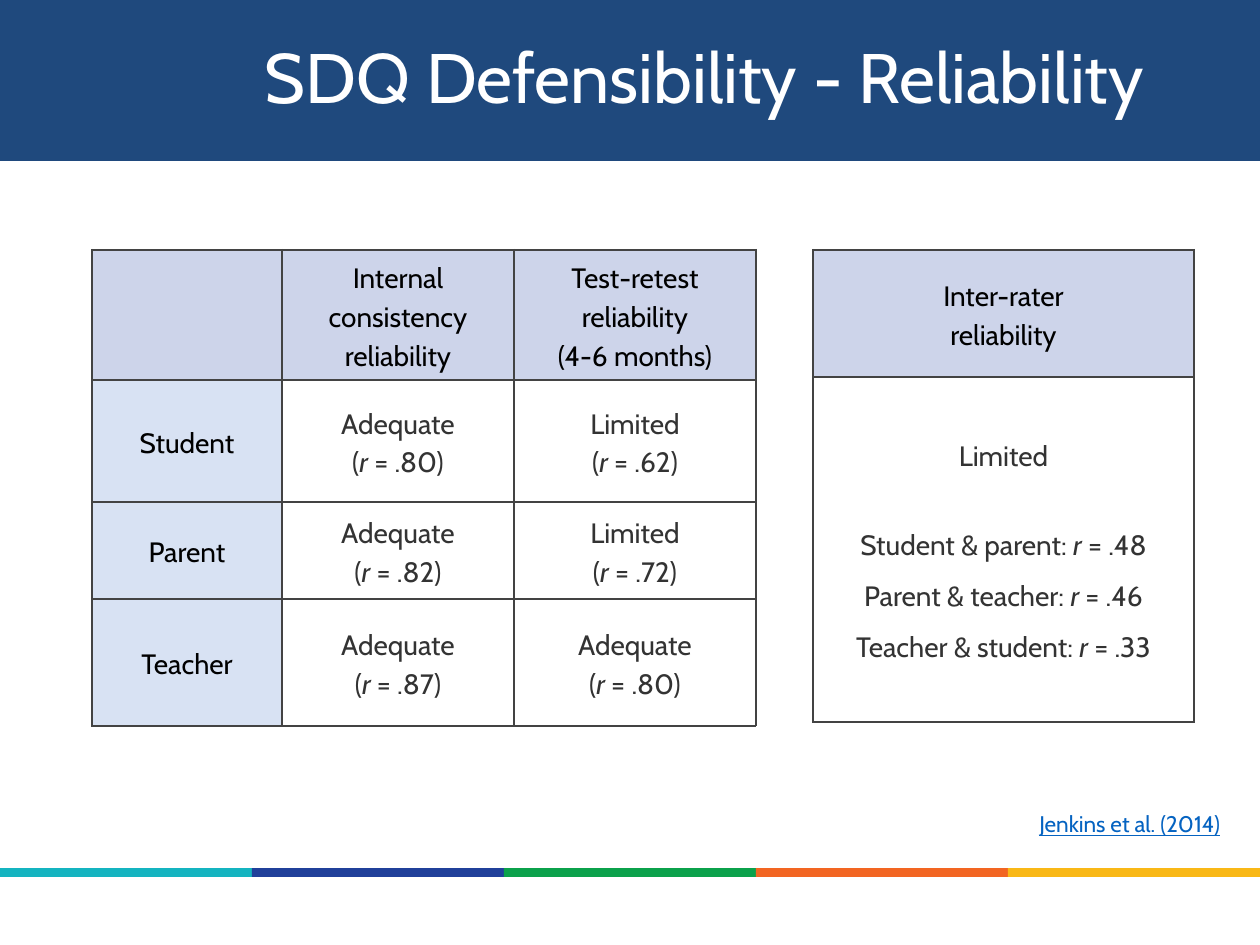
"""Build the SDQ reliability slide with its two tables and colour stripe."""
from lxml.etree import SubElement
from pptx import Presentation
from pptx.dml.color import RGBColor as RGB
from pptx.enum.shapes import MSO_SHAPE as SHAPE
from pptx.enum.text import MSO_ANCHOR as ANCHOR, PP_ALIGN as ALIGN
from pptx.oxml.ns import qn
from pptx.util import Pt

PX = 914400 / 126
FONT = "Cabin"
WHITE = RGB(0xFF, 0xFF, 0xFF)
BLACK = RGB(0x00, 0x00, 0x00)
NAVY = RGB(0x1F, 0x49, 0x7D)
GREY = RGB(0x33, 0x33, 0x33)
LINE = RGB(0x43, 0x43, 0x43)
HEAD = RGB(0xCD, 0xD4, 0xEA)
SIDE = RGB(0xD8, 0xE2, 0xF3)
LINK = RGB(0x05, 0x63, 0xC1)
STRIPE = [RGB(0x14, 0xB4, 0xC0), RGB(0x20, 0x40, 0x9A), RGB(0x0B, 0xA1, 0x4B),
          RGB(0xF2, 0x65, 0x22), RGB(0xF9, 0xB8, 0x17)]


def px(*lengths):
    return [round(length * PX) for length in lengths]


def write(paragraph, text, layout, style):
    for name, value in layout.items():
        setattr(paragraph, name, value)
    for index, part in enumerate(text.split("*")):
        run = paragraph.add_run()
        run.text = part
        run.font.name = FONT
        run.font.italic = index % 2 == 1
        run.font.color.rgb = style["color"]
        run.font.size = Pt(style["size"])
        run.font.underline = style.get("underline", False)


deck = Presentation()
deck.slide_width, deck.slide_height = px(1260, 945)
slide = deck.slides.add_slide(deck.slide_layouts[6])

bands = [((0, 0, 1260, 161), NAVY)]
bands += [((252 * i, 868, 252, 9), color) for i, color in enumerate(STRIPE)]
for place, color in bands:
    band = slide.shapes.add_shape(SHAPE.RECTANGLE, *px(*place))
    band.shadow.inherit = False
    band.fill.solid()
    band.fill.fore_color.rgb = color
    band.line.fill.background()

captions = [
    ("SDQ Defensibility - Reliability", (252, 0, 1008, 162), (13, 6), ANCHOR.MIDDLE,
     {"alignment": ALIGN.LEFT, "line_spacing": 0.9}, {"size": 40, "color": WHITE}),
    ("Jenkins et al. (2014)", (988, 804, 241, 53), (9, 5), ANCHOR.TOP,
     {"alignment": ALIGN.RIGHT, "line_spacing": 1.05},
     {"size": 12.9, "color": LINK, "underline": True}),
]
for text, place, (side, end), anchor, layout, style in captions:
    frame = slide.shapes.add_textbox(*px(*place)).text_frame
    frame.word_wrap = True
    frame.vertical_anchor = anchor
    frame.margin_left, frame.margin_right = px(side, side)
    frame.margin_top, frame.margin_bottom = px(end, end)
    write(frame.paragraphs[0], text, layout, style)

by_rater = [
    [[], ["Internal consistency reliability"], ["Test-retest reliability", "(4-6 months)"]],
    [["Student"], ["Adequate", "(*r* = .80)"], ["Limited", "(*r* = .62)"]],
    [["Parent"], ["Adequate", "(*r* = .82)"], ["Limited", "(*r* = .72)"]],
    [["Teacher"], ["Adequate", "(*r* = .87)"], ["Adequate", "(*r* = .80)"]],
]
between_raters = [
    [["Inter-rater", "reliability"]],
    [["Limited", "Student & parent: *r* = .48", "Parent & teacher: *r* = .46",
      "Teacher & student: *r* = .33"]],
]
tables = [
    (92, [190, 232, 242], [130, 122, 97, 127], by_rater),
    (813, [381], [127, 345], between_raters),
]
for left, widths, heights, content in tables:
    place = px(left, 250, sum(widths), sum(heights))
    table = slide.shapes.add_table(len(heights), len(widths), *place).table
    table.first_row = table.horz_banding = False
    for column, width in zip(table.columns, px(*widths)):
        column.width = width
    for row, height in zip(table.rows, px(*heights)):
        row.height = height
    for r, texts in enumerate(content):
        for c, lines in enumerate(texts):
            cell = table.cell(r, c)
            is_side = c == 0 and len(widths) > 1
            cell.vertical_anchor = ANCHOR.MIDDLE
            for edge in ("left", "right", "top", "bottom"):
                setattr(cell, f"margin_{edge}", px(6)[0])
            for edge in "LRTB":
                weight = 1.5 if r == 0 and edge == "T" else 0.75
                border = SubElement(cell._tc.get_or_add_tcPr(), qn(f"a:ln{edge}"),
                                    w=str(Pt(weight)))
                SubElement(SubElement(border, qn("a:solidFill")), qn("a:srgbClr"),
                           val=str(LINE))
            cell.fill.solid()
            cell.fill.fore_color.rgb = HEAD if r == 0 else SIDE if is_side else WHITE
            style = {"size": 16, "color": BLACK if r == 0 or is_side else GREY}
            for i, line in enumerate(lines):
                frame = cell.text_frame
                paragraph = frame.add_paragraph() if i else frame.paragraphs[0]
                layout = {"alignment": ALIGN.CENTER,
                          "line_spacing": 1.5 if ": " in line else 1.15}
                if ": " in line and i == 1:
                    layout["space_before"] = Pt(22)
                write(paragraph, line, layout, style)

deck.save("out.pptx")
